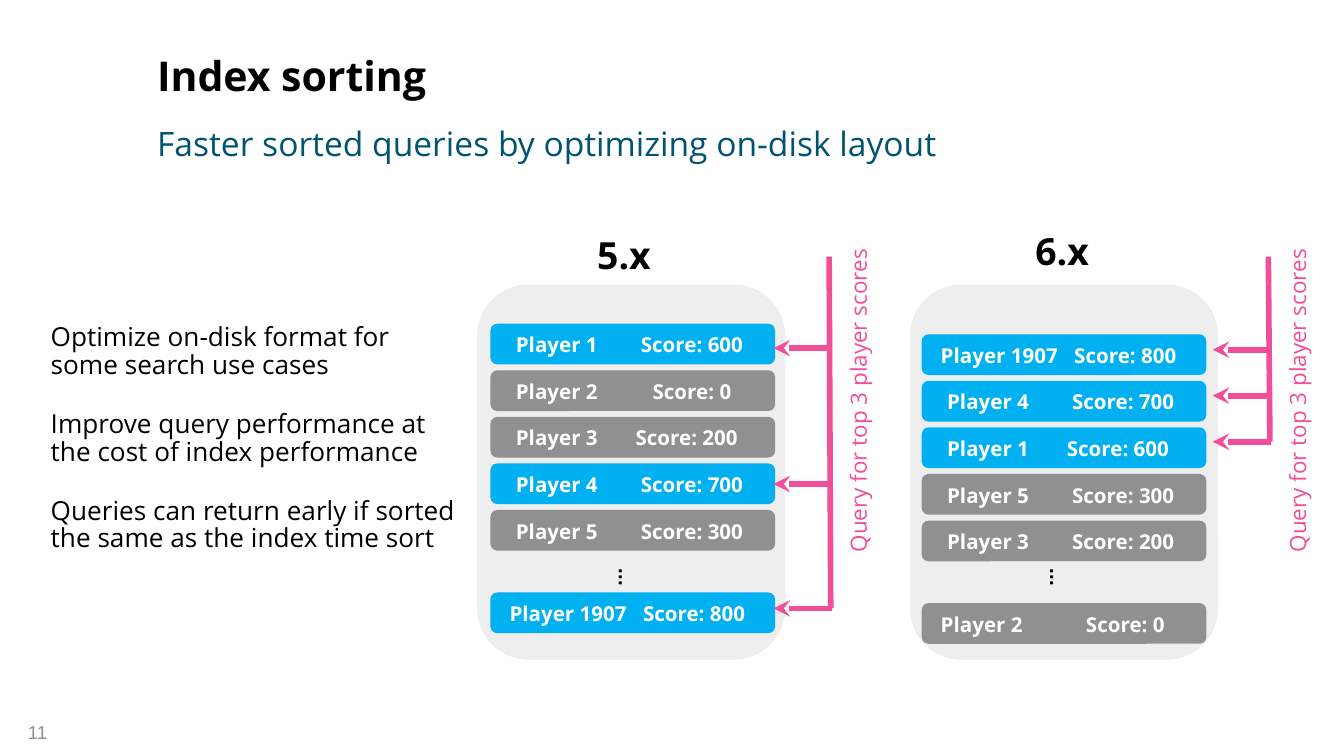
from lxml.etree import SubElement
from pptx import Presentation
from pptx.dml.color import RGBColor
from pptx.enum.shapes import MSO_CONNECTOR, MSO_SHAPE
from pptx.enum.text import MSO_ANCHOR, PP_ALIGN
from pptx.oxml.ns import qn
from pptx.util import Cm, Pt

BLUE, GREY, PINK, PALE = "00B0F0", "909091", "F04E98", "EEEEEE"


def rgb(value):
    """Return the colour for a hex string."""
    return RGBColor.from_string(value)


def write(sp, text, size=11, color="000000", bold=False, font="Open Sans",
          align=PP_ALIGN.LEFT, anchor=MSO_ANCHOR.TOP, inset=0.25,
          spacing=None, gap=0):
    """Fill a shape with text, one paragraph per line."""
    tf = sp.text_frame
    tf.word_wrap = True
    tf.vertical_anchor = anchor
    tf.margin_left = tf.margin_right = Cm(0.25)
    tf.margin_top = tf.margin_bottom = Cm(inset)
    for i, line in enumerate(text.split("\n")):
        p = tf.paragraphs[0] if i == 0 else tf.add_paragraph()
        p.alignment = align
        if spacing:
            p.line_spacing = spacing
        if i and gap:
            p.space_before = Pt(gap)
        r = p.add_run()
        r.text = line
        r.font.name, r.font.size, r.font.bold = font, Pt(size), bold
        r.font.color.rgb = rgb(color)


def add_text(s, text, x, y, w, h, rotation=0, **fmt):
    """Add a text box."""
    sp = s.shapes.add_textbox(Cm(x), Cm(y), Cm(w), Cm(h))
    sp.rotation = rotation
    write(sp, text, **fmt)


def add_box(shapes, kind, x, y, w, h, fill):
    """Add a filled preset shape without an outline."""
    sp = shapes.add_shape(kind, Cm(x), Cm(y), Cm(w), Cm(h))
    sp.shadow.inherit = False
    sp.line.fill.background()
    sp.fill.solid()
    sp.fill.fore_color.rgb = rgb(fill)
    return sp


def add_line(s, x1, y1, x2, y2, arrow=False):
    """Add a pink line, with an arrowhead at its end if asked."""
    sp = s.shapes.add_connector(MSO_CONNECTOR.STRAIGHT, Cm(x1), Cm(y1), Cm(x2), Cm(y2))
    sp.line.color.rgb = rgb(PINK)
    sp.line.width = Pt(3)
    if arrow:
        SubElement(sp.line._get_or_add_ln(), qn("a:tailEnd"), type="stealth")
    SubElement(sp._element.spPr, qn("a:effectLst"))


def add_row(s, x, y, player, score, fill, wide, shift):
    """Add one grouped record with a player and a score."""
    shapes = s.shapes.add_group_shape().shapes
    add_box(shapes, MSO_SHAPE.ROUNDED_RECTANGLE, x, y, 5.38, 0.77, fill)
    name_w, score_x, score_w = (3, 2.62, 2.46) if wide else (2.29, 2.31, 3)
    align = PP_ALIGN.LEFT if wide else PP_ALIGN.CENTER
    cells = [(player, 0.11, name_w, align),
             (f"Score: {score}", score_x + shift, score_w, PP_ALIGN.CENTER)]
    for text, dx, w, al in cells:
        sp = add_box(shapes, MSO_SHAPE.RECTANGLE, x + dx, y + 0.05, w, 0.69, fill)
        write(sp, text, color="FFFFFF", bold=True, align=al, anchor=MSO_ANCHOR.MIDDLE)


def add_index(s, x, row_x, row_y, rows, hits, arrow_ys, trunk_x):
    """Add an index panel with its records and query arrows."""
    add_box(s.shapes, MSO_SHAPE.ROUNDED_RECTANGLE, x, 5.38, 5.82, 7.09, PALE)
    last = len(rows) - 1
    for i, (player, score) in enumerate(rows):
        y = row_y + (5.08 if i == last else 0.88 * i)
        add_row(s, row_x, y, f"Player {player}", score,
                BLUE if player in hits else GREY,
                wide=i == last or player > 99, shift=-0.1 if i == 2 else 0)
    add_text(s, "...", row_x + 1.97, 10.86, 1.22, 0.51, rotation=90, bold=True,
             font="Arial", anchor=MSO_ANCHOR.MIDDLE)
    for y in arrow_ys:
        add_line(s, trunk_x, y, trunk_x - 1.1, y, arrow=True)
    add_line(s, trunk_x - 0.02, arrow_ys[-1], trunk_x - 0.05, 4.85)
    add_text(s, "Query for top 3 player scores", trunk_x - 2.73, 7.11, 6.3, 0.86,
             rotation=270, size=12, color=PINK)


def main():
    """Build the slide."""
    prs = Presentation()
    prs.slide_width, prs.slide_height = Cm(25.4), Cm(14.29)
    s = prs.slides.add_slide(prs.slide_layouts[6])
    add_text(s, "11", 0.28, 13.49, 2.79, 0.76, size=10, color=GREY,
             font="Arial", inset=0.13)
    add_text(s, "Index sorting", 2.72, 0.69, 21.87, 1.45, size=22, bold=True,
             anchor=MSO_ANCHOR.BOTTOM, spacing=0.85)
    add_text(s, "Faster sorted queries by optimizing on-disk layout",
             2.72, 2.13, 20.22, 1.14, size=18, color="005472", anchor=MSO_ANCHOR.MIDDLE)
    add_text(s, "Optimize on-disk format for some search use cases\n"
             "Improve query performance at the cost of index performance\n"
             "Queries can return early if sorted the same as the index time sort",
             0.71, 5.89, 8.18, 6, size=14, spacing=0.88, gap=16.8)
    hits = {1, 4, 1907}
    add_index(s, 9.02, 9.27, 6.12,
              [(1, 600), (2, 0), (3, 200), (4, 700), (5, 300), (1907, 800)],
              hits, [6.58, 9.15, 11.5], 15.72)
    add_index(s, 17.2, 17.42, 6.32,
              [(1907, 800), (4, 700), (1, 600), (5, 300), (3, 200), (2, 0)],
              hits, [6.61, 7.48, 8.35], 24.02)
    for text, x, y in [("5.x", 9.8, 4.14), ("6.x", 18.08, 4.06)]:
        add_text(s, text, x, y, 3.99, 0.56, size=20, bold=True, align=PP_ALIGN.CENTER)
    prs.save("out.pptx")


if __name__ == "__main__":
    main()
